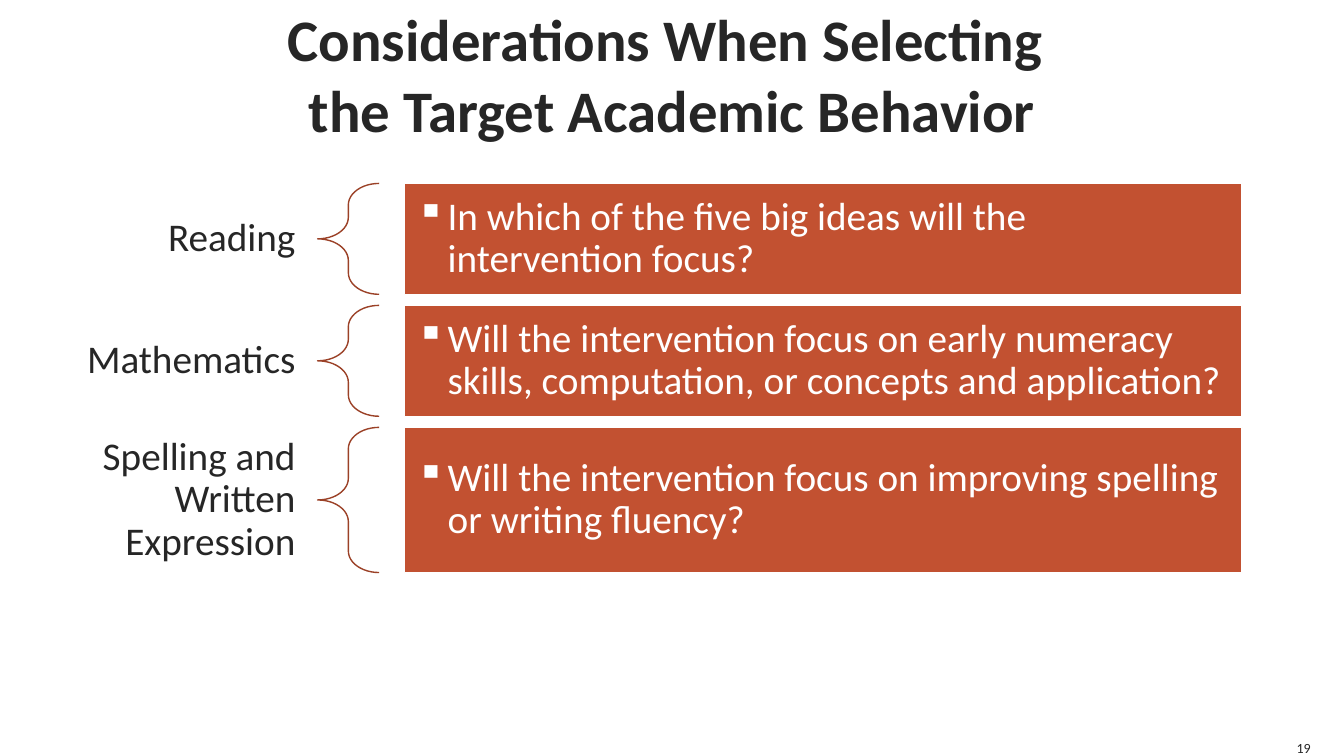
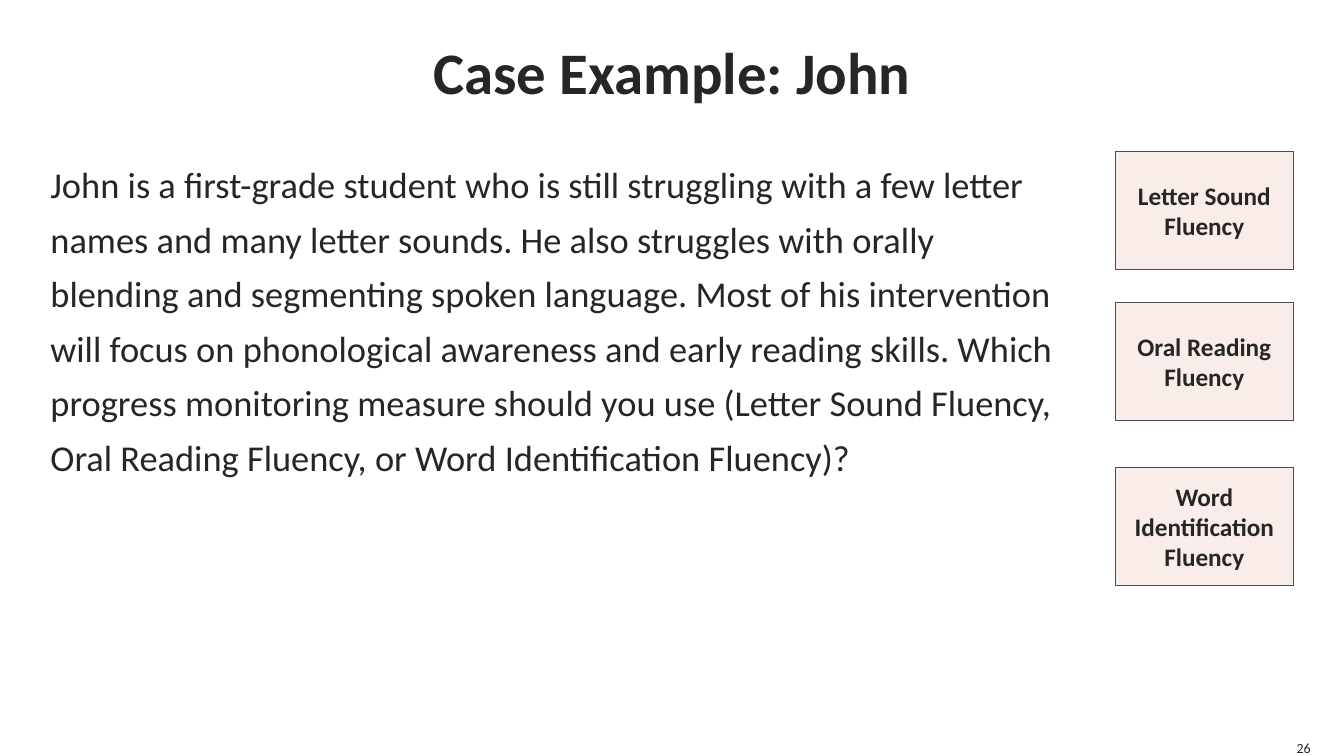
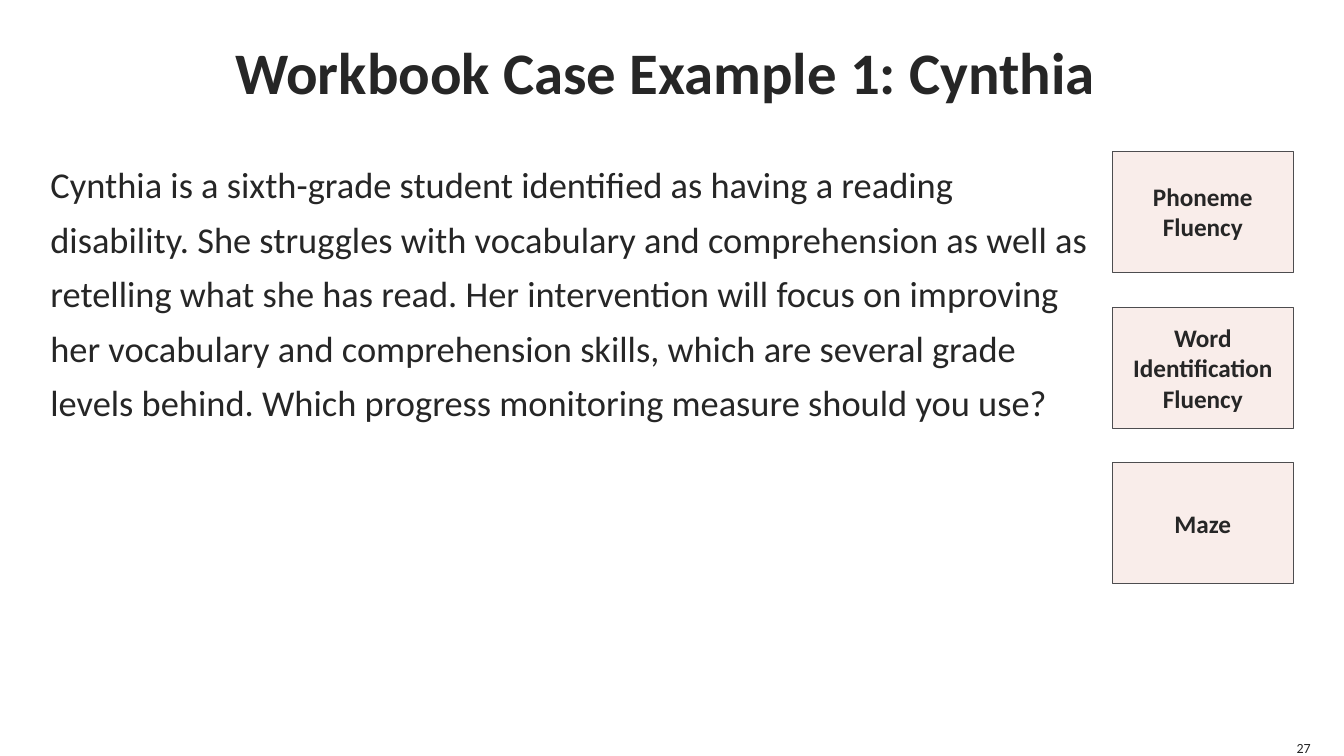
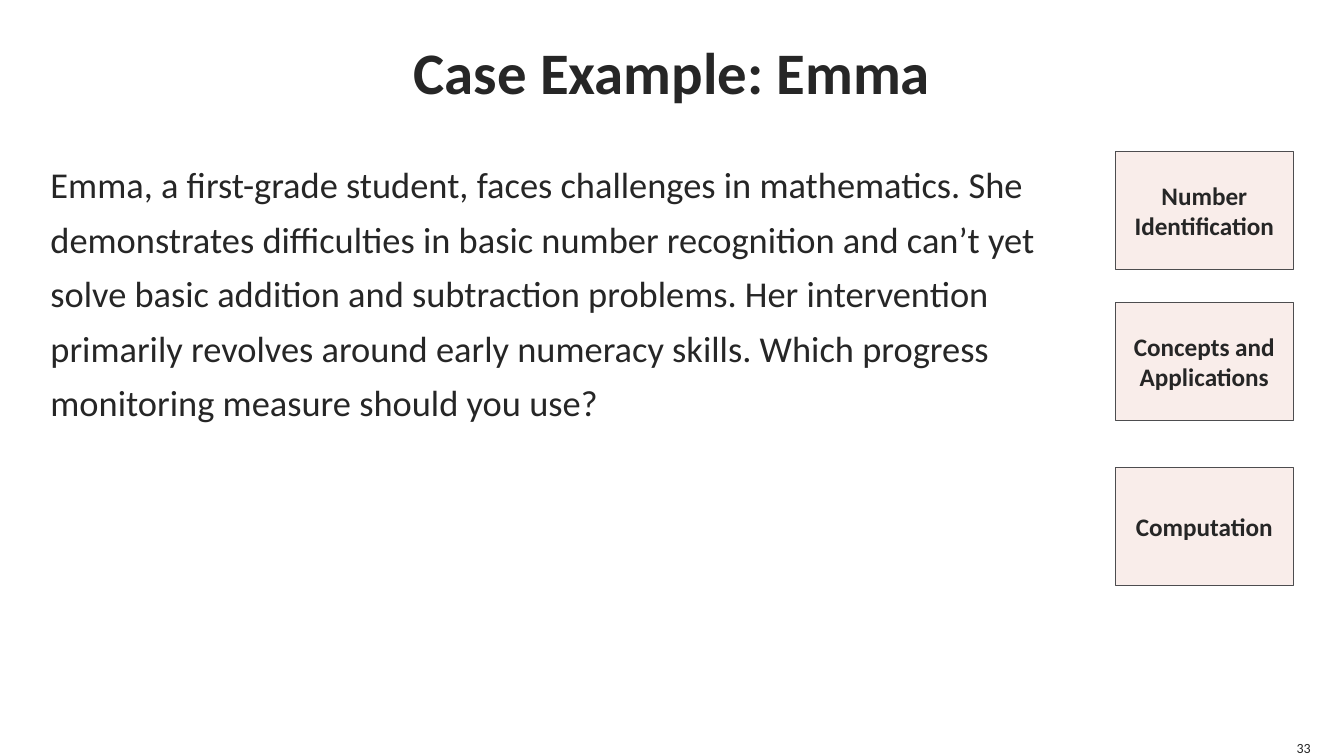
import pptx
import pptx.dml.color
import pptx.enum.shapes
import pptx.enum.text
import pptx.oxml.ns
import pptx.util
from lxml import etree
from pptx.util import Inches

SHAPES = pptx.enum.shapes.MSO_SHAPE
ALIGN = pptx.enum.text.PP_ALIGN
ANCHOR = pptx.enum.text.MSO_ANCHOR

COLOURS = {
    "ink": "262626",
    "white": "FFFFFF",
    "rust": "C25131",
    "brace": "9B4127",
    "blush": "F9EDEA",
    "grey": "4D4D4F",
}


class Designer:
    """Holds the deck's style and the slide being filled."""

    font = "Calibri"

    def __init__(self):
        self.deck = pptx.Presentation()
        self.deck.slide_width = Inches(13.33)
        self.deck.slide_height = Inches(7.5)
        self.page = None

    def colour(self, name):
        return pptx.dml.color.RGBColor.from_string(COLOURS[name])

    def start(self, title, number, title_top=0):
        """Add a slide with its title and page number."""
        self.page = self.deck.slides.add_slide(self.deck.slide_layouts[6])
        self.text((0.5, title_top, 12.33, 1.4), title, 42, bold=True,
                  align=ALIGN.CENTER)
        self.text((12.83, 7.33, 0.17, 0.17), str(number), 10,
                  align=ALIGN.RIGHT, anchor=ANCHOR.BOTTOM, wrap=False)

    def text(self, place, words, size, **style):
        box = self.page.shapes.add_textbox(*map(Inches, place))
        self.fill_text(box, words, size, **style)

    def fill_text(self, box, words, size, colour="ink", bold=False,
                  align=ALIGN.LEFT, anchor=ANCHOR.MIDDLE, insets=(0, 0),
                  spacing=None, wrap=True, bullet=None):
        """Put one styled paragraph in a box; insets are across and down."""
        frame = box.text_frame
        frame.word_wrap = wrap
        frame.vertical_anchor = anchor
        frame.margin_left = frame.margin_right = Inches(insets[0])
        frame.margin_top = frame.margin_bottom = Inches(insets[1])
        para = frame.paragraphs[0]
        para.text = words
        if bullet:
            self.add_bullet(para, bullet)
        para.alignment = align
        para.line_spacing = spacing
        para.font.name = self.font
        para.font.size = pptx.util.Pt(size)
        para.font.bold = bold
        para.font.color.rgb = self.colour(colour)

    def add_bullet(self, para, symbol):
        properties = para._p.get_or_add_pPr()
        properties.set("marL", str(Inches(0.31)))
        properties.set("indent", str(Inches(-0.31)))
        mark = etree.SubElement(properties, pptx.oxml.ns.qn("a:buChar"))
        mark.set("char", symbol)

    def shape(self, kind, place, line, width, fill=None):
        shape = self.page.shapes.add_shape(kind, *map(Inches, place))
        shape.shadow.inherit = False
        shape.line.color.rgb = self.colour(line)
        shape.line.width = pptx.util.Pt(width)
        if fill:
            shape.fill.solid()
            shape.fill.fore_color.rgb = self.colour(fill)
        else:
            shape.fill.background()
        return shape

    def subject_row(self, top, height, subject, question):
        """Add a subject, a brace and the question it leads to."""
        self.text((0.1, top, 3.05, height), subject, 28, align=ALIGN.RIGHT,
                  insets=(0.22, 0.08), spacing=0.9)
        brace = self.shape(SHAPES.LEFT_BRACE, (3.15, top, 0.61, height),
                           "brace", 1)
        brace.adjustments[0] = 0.35
        bar = self.shape(SHAPES.RECTANGLE, (4.01, top, 8.31, height),
                         "white", 1, "rust")
        self.fill_text(bar, question, 28, colour="white", insets=(0.12, 0.12),
                       spacing=0.9, bullet="▪")

    def case(self, title, number, story, measures, story_width=10.01,
             card_size=(1.77, 1.17), card_tops=(1.5, 3, 4.64)):
        """Add a slide with a story and a column of measures to choose from."""
        self.start(title, number)
        self.text((0.5, 1.5, story_width, 4.6), story, 26,
                  anchor=ANCHOR.TOP, spacing=1.25)
        for top, measure in zip(card_tops, measures):
            card = self.shape(SHAPES.RECTANGLE,
                              (12.83 - card_size[0], top, *card_size),
                              "grey", 0.75, "blush")
            self.fill_text(card, measure, 18, bold=True, align=ALIGN.CENTER,
                           insets=(0.1, 0.05))


def main():
    designer = Designer()

    designer.start("Considerations When Selecting \vthe Target Academic Behavior",
                   19, title_top=0.03)
    top = 1.82
    for height, subject, question in (
        (1.1, "Reading",
         "In which of the five big ideas will the intervention focus?"),
        (1.1, "Mathematics",
         "Will the intervention focus on early numeracy skills, computation, "
         "or concepts and application?"),
        (1.44, "Spelling and Written Expression",
         "Will the intervention focus on improving spelling or writing "
         "fluency?"),
    ):
        designer.subject_row(top, height, subject, question)
        top += height + 0.11

    designer.case(
        "Case Example: John", 26,
        "John is a first-grade student who is still struggling with a few "
        "letter names and many letter sounds. He also struggles with orally "
        "blending and segmenting spoken language. Most of his intervention "
        "will focus on phonological awareness and early reading skills. Which "
        "progress monitoring measure should you use (Letter Sound Fluency, "
        "Oral Reading Fluency, or Word Identification Fluency)?",
        ("Letter Sound Fluency", "Oral Reading Fluency",
         "Word Identification Fluency"))

    designer.case(
        "Workbook Case Example 1: Cynthia ", 27,
        "Cynthia is a sixth-grade student identified as having a reading "
        "disability. She struggles with vocabulary and comprehension as well "
        "as retelling what she has read. Her intervention will focus on "
        "improving her vocabulary and comprehension skills, which are several "
        "grade levels behind. Which progress monitoring measure should you "
        "use?",
        ("Phoneme Fluency", "Word Identification Fluency", "Maze"),
        story_width=10.33, card_size=(1.8, 1.2), card_tops=(1.5, 3.05, 4.59))

    designer.case(
        "Case Example: Emma", 33,
        "Emma, a first-grade student, faces challenges in mathematics. She "
        "demonstrates difficulties in basic number recognition and can’t yet "
        "solve basic addition and subtraction problems. Her intervention "
        "primarily revolves around early numeracy skills. Which progress "
        "monitoring measure should you use?",
        ("Number Identification", "Concepts and Applications", "Computation"))

    designer.deck.save("out.pptx")


if __name__ == "__main__":
    main()
